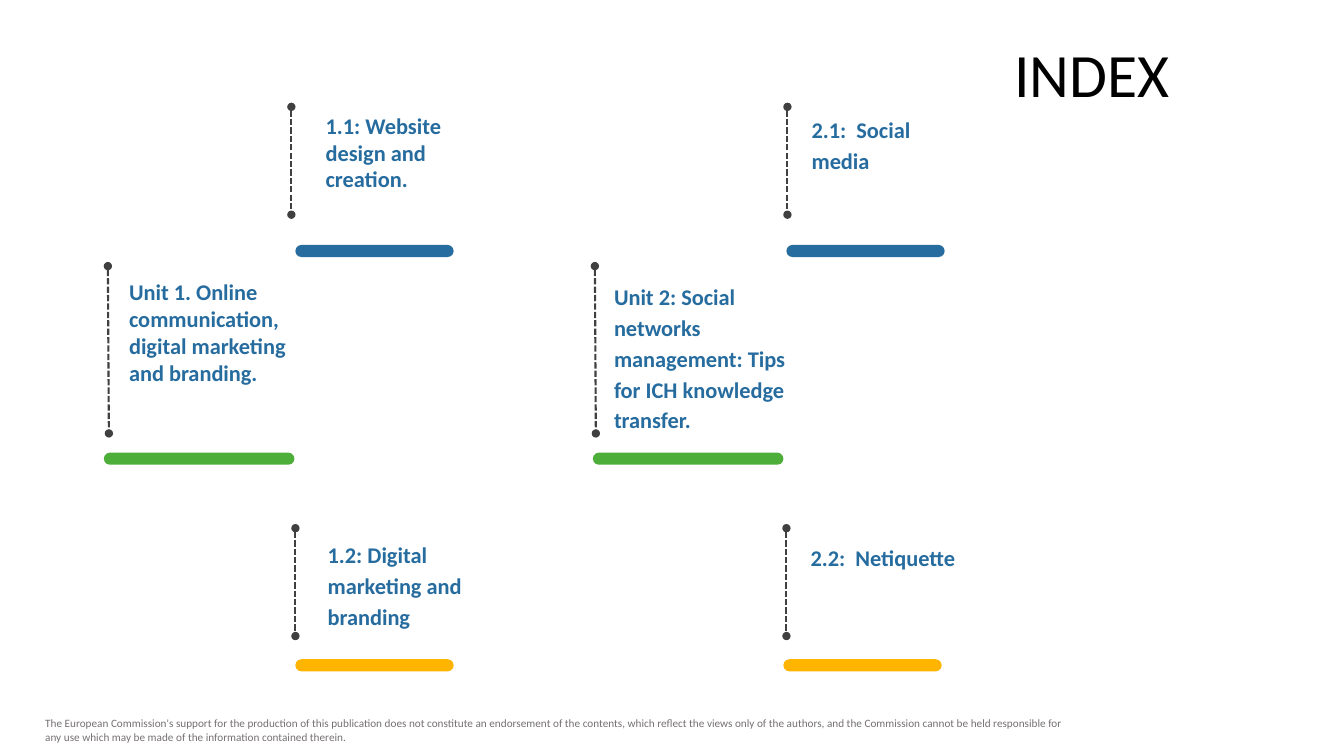
from collections import namedtuple

from lxml import etree
from pptx import Presentation
from pptx.dml.color import RGBColor
from pptx.enum.dml import MSO_LINE_DASH_STYLE as DASH
from pptx.enum.shapes import MSO_CONNECTOR, MSO_SHAPE
from pptx.enum.text import MSO_ANCHOR, MSO_AUTO_SIZE, PP_ALIGN
from pptx.oxml.ns import qn
from pptx.util import Inches, Pt

WIDTH, HEIGHT = Inches(13.33), Inches(7.5)
COLS, ROWS = 1333, 750
BLACK = RGBColor(0x00, 0x00, 0x00)
GREY = RGBColor(0x76, 0x71, 0x71)
DARK = RGBColor(0x40, 0x40, 0x40)
BLUE = RGBColor(0x26, 0x6C, 0x9F)
GREEN = RGBColor(0x4E, 0xAE, 0x3A)
AMBER = RGBColor(0xFF, 0xB5, 0x00)
BAR_ROWS = 12

TITLE_FONT = dict(name="Calibri", size=Pt(44), bold=False)
CARD_FONT = dict(name="Calibri", size=Pt(16), bold=True)
NOTICE_FONT = dict(name="Calibri", size=Pt(8), bold=False)
CARD_MARGINS = dict(margin_left=Inches(0.12), margin_right=Inches(0.12),
                    margin_top=Inches(0.05), margin_bottom=Inches(0.05))
LOOSE = dict(line_spacing=1.15, space_after=Pt(10))

Card = namedtuple("Card", "text color box rail text_box para")

# box: column, row, columns, rows; rail: column offset, slant, rows
CARDS = [
    Card("Unit 1. Online communication, digital marketing and branding.", GREEN,
         (103, 264, 189, 197), (4, 1, 166), (13, 7, 212, 145), {}),
    Card("1.1: Website design and creation.", BLUE,
         (293, 106, 157, 149), (-4, 0, 107), (18, 0, 173, 118), {}),
    Card("1.2: Digital marketing and branding", AMBER,
         (293, 524, 157, 142), (0, 0, 107), (20, 4, 173, 101), LOOSE),
    Card("Unit 2: Social networks management: Tips for ICH knowledge transfer.", GREEN,
         (588, 264, 189, 197), (2, 1, 166), (9, 8, 196, 163), LOOSE),
    Card("2.1:  Social media", BLUE,
         (780, 106, 157, 149), (1, 0, 107), (13, 0, 173, 70), LOOSE),
    Card("2.2:  Netiquette", AMBER,
         (777, 524, 157, 142), (3, 0, 107), (15, 7, 173, 39), LOOSE),
]


def place(col, row, cols, rows):
    """Turn grid columns and rows into slide lengths."""
    return (round(col * WIDTH / COLS), round(row * HEIGHT / ROWS),
            round(cols * WIDTH / COLS), round(rows * HEIGHT / ROWS))


def apply(target, values):
    """Set each named attribute on the target."""
    for name, value in values.items():
        setattr(target, name, value)


def write(tf, text, font, color, para):
    """Fill a text frame with one formatted paragraph."""
    tf.word_wrap = True
    p = tf.paragraphs[0]
    apply(p, para)
    r = p.add_run()
    r.text = text
    apply(r.font, font)
    r.font.color.rgb = color


def add_text(s, box, text, font, color, para, margins):
    """Add a wrapped text box on the grid."""
    tf = s.shapes.add_textbox(*place(*box)).text_frame
    apply(tf, margins)
    tf.auto_size = MSO_AUTO_SIZE.SHAPE_TO_FIT_TEXT
    write(tf, text, font, color, para)


def add_rail(s, col, row, slant, rows):
    """Add a dashed rail with a dot at each end."""
    x, y, dx, dy = place(col, row, slant, rows)
    line = s.shapes.add_connector(MSO_CONNECTOR.STRAIGHT, x, y, x + dx, y + dy)
    apply(line.line, dict(width=Pt(1.5), dash_style=DASH.SQUARE_DOT))
    line.line.color.rgb = DARK
    ln = line.line._get_or_add_ln()
    for end in ("a:headEnd", "a:tailEnd"):
        etree.SubElement(ln, qn(end), type="oval")
    etree.SubElement(line._element.spPr, qn("a:effectLst"))


def add_bar(s, box, color):
    """Add a rounded colour bar."""
    bar = s.shapes.add_shape(MSO_SHAPE.ROUNDED_RECTANGLE, *place(*box))
    bar.adjustments[0] = 0.5
    bar.shadow.inherit = False
    bar.fill.solid()
    bar.fill.fore_color.rgb = color
    bar.line.fill.background()


def add_card(s, card):
    """Place a rail, its text and the bar below within the card's box."""
    col, row, cols, rows = card.box
    dx, slant, length = card.rail
    text_dx, text_dy, text_cols, text_rows = card.text_box
    add_bar(s, (col, row + rows - BAR_ROWS, cols, BAR_ROWS), card.color)
    add_rail(s, col + dx, row, slant, length)
    add_text(s, (col + text_dx, row + text_dy, text_cols, text_rows),
             card.text, CARD_FONT, BLUE, card.para, CARD_MARGINS)


def add_title(s, box, text):
    """Move and format the title placeholder."""
    title = s.shapes.title
    title.left, title.top, title.width, title.height = place(*box)
    title.text_frame.vertical_anchor = MSO_ANCHOR.MIDDLE
    write(title.text_frame, text, TITLE_FONT, BLACK,
          dict(alignment=PP_ALIGN.RIGHT, line_spacing=0.9))


def main():
    """Build the index slide."""
    prs = Presentation()
    prs.slide_width, prs.slide_height = WIDTH, HEIGHT
    s = prs.slides.add_slide(prs.slide_layouts[5])
    add_title(s, (309, 37, 861, 79), "INDEX")
    for card in CARDS:
        add_card(s, card)
    add_text(s, (35, 706, 1046, 37),
             "The European Commission's support for the production of this publication "
             "does not constitute an endorsement of the contents, which reflect the views "
             "only of the authors, and the Commission cannot be held responsible for any "
             "use which may be made of the information contained therein.",
             NOTICE_FONT, GREY, {}, {})
    prs.save("out.pptx")


if __name__ == "__main__":
    main()
